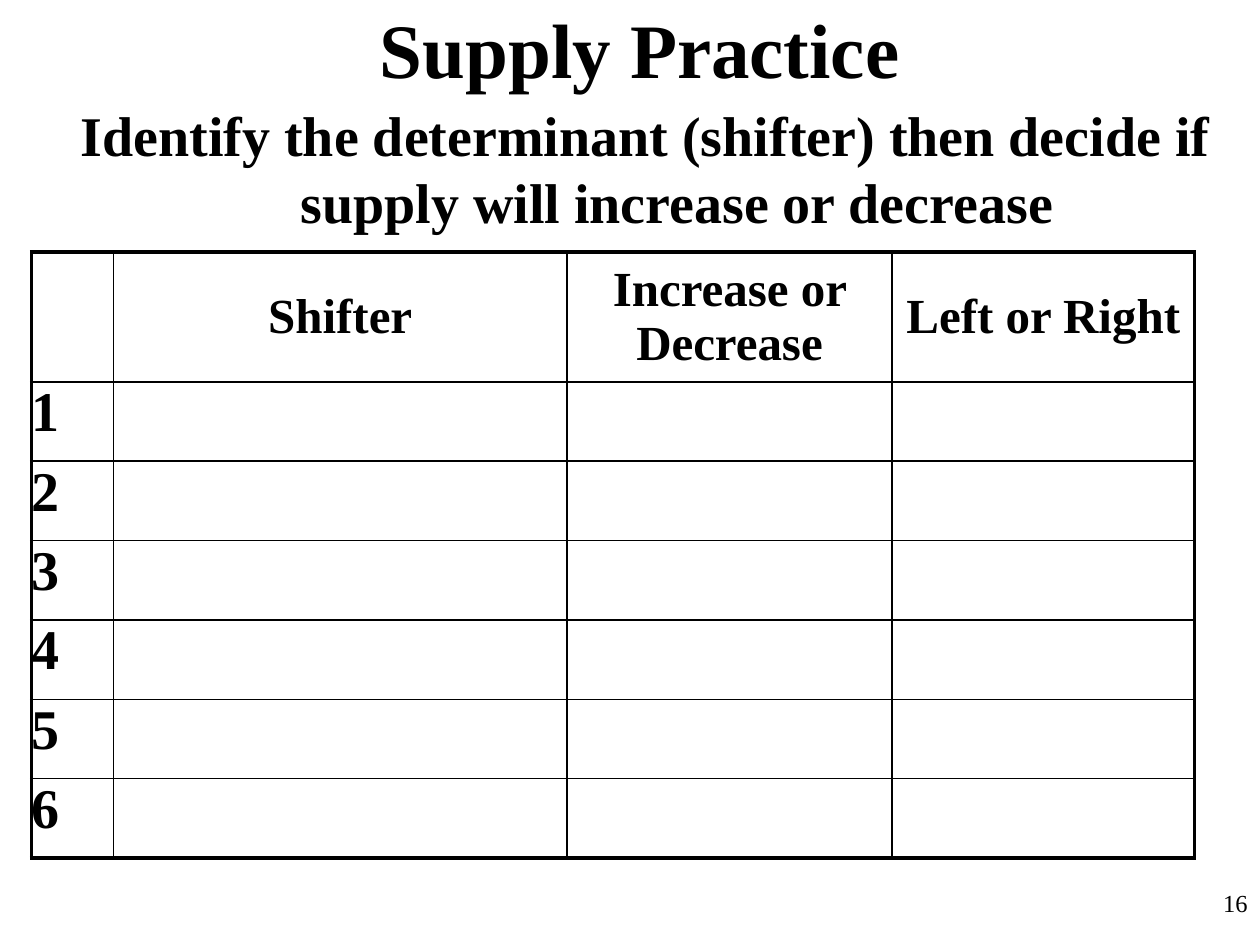
from lxml import etree
from pptx import Presentation
from pptx import util as u
from pptx.dml.color import RGBColor
from pptx.enum import text
from pptx.oxml.ns import qn

COLORS = {"ink": "000000", "paper": "FFFFFF"}
FONT = "Times New Roman"
SLIDE_WIDTH, SLIDE_HEIGHT = 10, 7.5
COLUMNS = [0.65, 3.6, 2.58, 2.4]
HEADER_HEIGHT, ROW_HEIGHT = 1.03, 0.63
HEADERS = ["", "Shifter", "Increase or Decrease", "Left or Right"]
QUESTION_COUNT = 6
OUTER_LINE, INNER_LINE = 2.25, 1
MARGINS = ("margin_left", "margin_right", "margin_top", "margin_bottom")


def write(paragraph, words, size, bold=True, align=text.PP_ALIGN.CENTER):
    """Put one formatted run into a paragraph."""
    paragraph.alignment = align
    run = paragraph.add_run()
    run.text = words
    formats = {"name": FONT, "size": u.Pt(size), "bold": bold}
    for name, value in formats.items():
        setattr(run.font, name, value)
    run.font.color.rgb = RGBColor.from_string(COLORS["ink"])


def add_text(slide, box, words, size, anchor=text.MSO_ANCHOR.TOP, hanging=0, **style):
    """Place a wrapped text box with an optional hanging indent."""
    shape = slide.shapes.add_textbox(*map(u.Inches, box))
    frame = shape.text_frame
    for name, value in {"word_wrap": True, "vertical_anchor": anchor}.items():
        setattr(frame, name, value)
    paragraph = frame.paragraphs[0]
    write(paragraph, words, size, **style)
    if hanging:
        properties = paragraph._p.get_or_add_pPr()
        properties.set("marL", str(u.Inches(hanging)))
        properties.set("indent", str(-u.Inches(hanging)))


def set_borders(cell, widths):
    """Draw the cell's edges at the given widths in points."""
    properties = cell._tc.get_or_add_tcPr()
    for side, width in widths.items():
        line = etree.SubElement(properties, qn(f"a:ln{side}"), w=str(u.Pt(width)))
        fill = etree.SubElement(line, qn("a:solidFill"))
        etree.SubElement(fill, qn("a:srgbClr"), val=COLORS["ink"])


def add_heading(slide):
    """Place the title and the instruction below it."""
    add_text(slide, (0.83, -0.25, 8.5, 1.25), "Supply Practice", 44,
             anchor=text.MSO_ANCHOR.MIDDLE)
    add_text(slide, (0.25, 0.75, 9.75, 1.17),
             "Identify the determinant (shifter) then decide if "
             "supply will increase or decrease", 32, hanging=0.5)


def add_answer_table(slide, left, top):
    """Place the answer grid with a heavy outer frame."""
    heights = [HEADER_HEIGHT] + [ROW_HEIGHT] * QUESTION_COUNT
    last_row, last_column = len(heights) - 1, len(COLUMNS) - 1
    box = map(u.Inches, (left, top, sum(COLUMNS), sum(heights)))
    table = slide.shapes.add_table(len(heights), len(COLUMNS), *box).table
    for name in ("first_row", "horz_banding"):
        setattr(table, name, False)
    for column, width in zip(table.columns, COLUMNS):
        column.width = u.Inches(width)
    for row, height in zip(table.rows, heights):
        row.height = u.Inches(height)
    for r, row in enumerate(table.rows):
        for c, cell in enumerate(row.cells):
            edges = {"L": c == 0, "R": c == last_column, "T": r == 0, "B": r == last_row}
            set_borders(cell, {side: OUTER_LINE if outer else INNER_LINE
                               for side, outer in edges.items()})
            cell.fill.background()
            words = HEADERS[c] if r == 0 else str(r) if c == 0 else ""
            if not words:
                continue
            for name in MARGINS:
                setattr(cell, name, 0)
            paragraph = cell.text_frame.paragraphs[0]
            if r == 0:
                cell.vertical_anchor = text.MSO_ANCHOR.MIDDLE
                write(paragraph, words, 28)
            else:
                write(paragraph, words, 32, align=text.PP_ALIGN.LEFT)


def add_page_number(slide, width, height):
    """Place the page number in the bottom right corner."""
    box = (SLIDE_WIDTH - width, SLIDE_HEIGHT - height, width, height)
    add_text(slide, box, "16", 14, bold=False, align=text.PP_ALIGN.RIGHT)


def main():
    """Build and save the practice slide."""
    presentation = Presentation()
    presentation.slide_width = u.Inches(SLIDE_WIDTH)
    presentation.slide_height = u.Inches(SLIDE_HEIGHT)
    slide = presentation.slides.add_slide(presentation.slide_layouts[6])
    background = slide.background.fill
    background.solid()
    background.fore_color.rgb = RGBColor.from_string(COLORS["paper"])
    add_heading(slide)
    add_page_number(slide, 2.08, 0.5)
    add_answer_table(slide, 0.25, 2)
    presentation.save("out.pptx")


if __name__ == "__main__":
    main()
